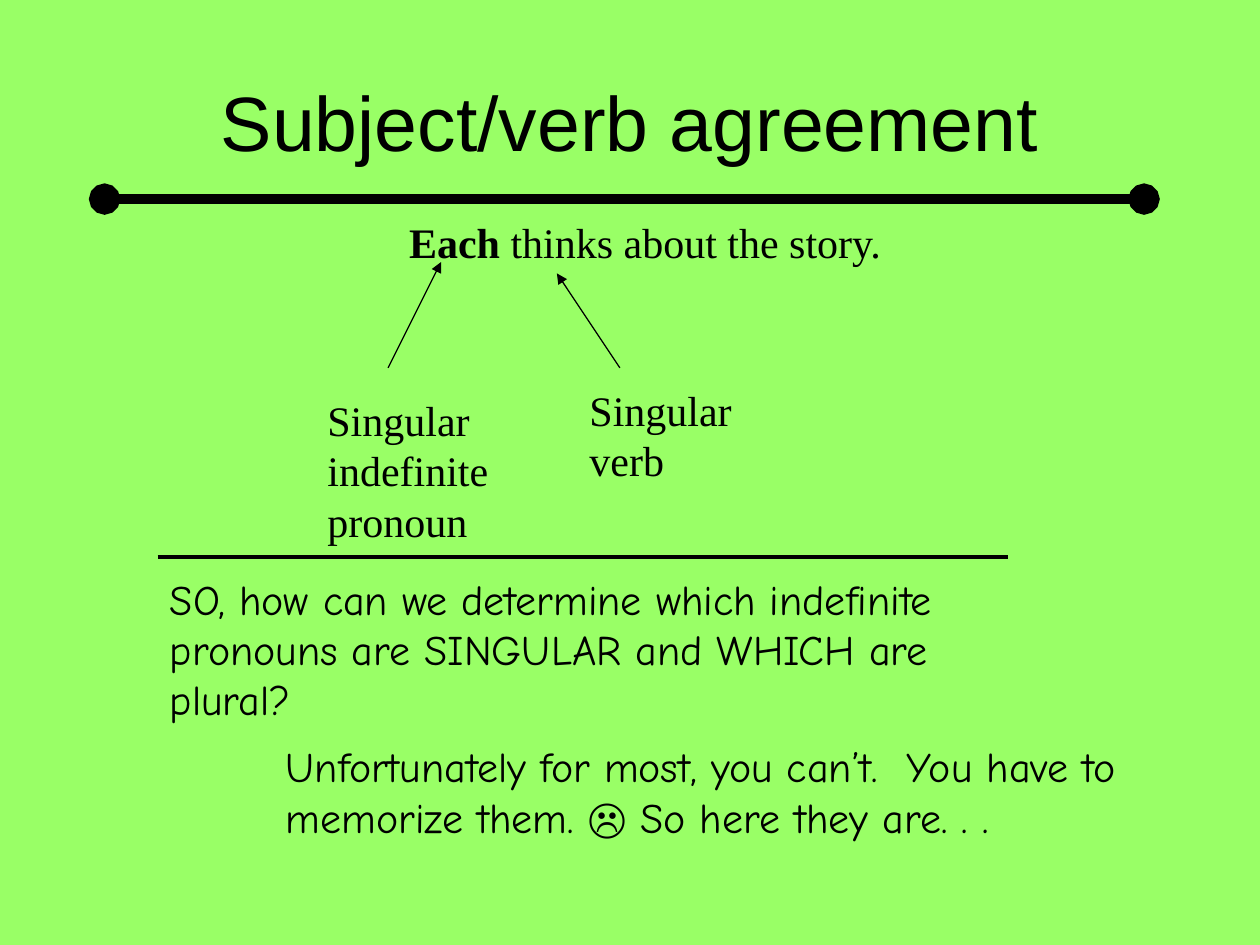
import dataclasses

import pptx
import pptx.dml.color
import pptx.enum.shapes
import pptx.enum.text
import pptx.oxml
import pptx.oxml.ns
import pptx.util
from pptx.util import Inches

ALIGN = pptx.enum.text.PP_ALIGN


@dataclasses.dataclass(frozen=True)
class Theme:
    background: str = "99FF66"
    ink: str = "000000"
    title_font: str = "Arial"
    example_font: str = "Times New Roman"
    note_font: str = "Comic Neue"
    title_size: float = 44
    body_size: float = 24
    line_spacing: float = 28.8


class SlideBuilder:
    def __init__(self, prs, theme):
        self.theme = theme
        self.s = prs.slides.add_slide(prs.slide_layouts[5])
        fill = self.s.background.fill
        fill.solid()
        fill.fore_color.rgb = self.color(theme.background)

    def color(self, value):
        return pptx.dml.color.RGBColor.from_string(value)

    def format(self, p, font, size, align):
        p.alignment = align
        p.font.name = font
        p.font.size = pptx.util.Pt(size)
        p.font.color.rgb = self.color(self.theme.ink)

    def title(self, text, left, top, width, height):
        sp = self.s.shapes.title
        sp.left, sp.top = Inches(left), Inches(top)
        sp.width, sp.height = Inches(width), Inches(height)
        tf = sp.text_frame
        tf.text = text
        tf.vertical_anchor = pptx.enum.text.MSO_ANCHOR.MIDDLE
        self.format(tf.paragraphs[0], self.theme.title_font,
                    self.theme.title_size, ALIGN.CENTER)

    def text(self, runs, left, top, width, height, font, align=ALIGN.LEFT):
        sp = self.s.shapes.add_textbox(
            Inches(left), Inches(top), Inches(width), Inches(height))
        tf = sp.text_frame
        tf.word_wrap = True
        tf.auto_size = pptx.enum.text.MSO_AUTO_SIZE.SHAPE_TO_FIT_TEXT
        p = tf.paragraphs[0]
        p.line_spacing = pptx.util.Pt(self.theme.line_spacing)
        self.format(p, font, self.theme.body_size, align)
        for text, bold in runs:
            r = p.add_run()
            r.text = text
            r.font.bold = bold

    def line(self, x1, y1, x2, y2, weight, head=None, tail=None):
        sp = self.s.shapes.add_connector(
            pptx.enum.shapes.MSO_CONNECTOR.STRAIGHT,
            Inches(x1), Inches(y1), Inches(x2), Inches(y2))
        sp.line.width = pptx.util.Pt(weight)
        sp.line.color.rgb = self.color(self.theme.ink)
        ln = sp.line._get_or_add_ln()
        for tag, kind in (("a:headEnd", head), ("a:tailEnd", tail)):
            if kind:
                end = pptx.oxml.xmlchemy.OxmlElement(tag)
                end.set("type", kind)
                ln.append(end)
        sp._element.spPr.append(
            pptx.oxml.xmlchemy.OxmlElement("a:effectLst"))


def main():
    prs = pptx.Presentation()
    prs.slide_width, prs.slide_height = Inches(10), Inches(7.5)
    theme = Theme()
    b = SlideBuilder(prs, theme)

    b.title("Subject/verb agreement", 0.75, 0.33, 8.5, 1.25)
    b.line(0.83, 1.58, 9.08, 1.58, 6, head="oval", tail="oval")

    b.text([("Each", True), (" thinks about the story.", False)],
           1.33, 1.67, 7.58, 0.5, theme.example_font, ALIGN.CENTER)
    b.line(3.08, 2.92, 3.5, 2.08, 0.75, tail="triangle")
    b.text([("Singular indefinite pronoun", False)],
           2.5, 3.08, 1.58, 1.3, theme.example_font)
    b.line(4.92, 2.92, 4.42, 2.17, 0.75, tail="triangle")
    b.text([("Singular verb", False)],
           4.58, 3, 1.58, 0.9, theme.example_font)

    b.line(1.25, 4.42, 8, 4.42, 2.25)
    b.text([("SO, how can we determine which indefinite pronouns are "
             "SINGULAR and WHICH are plural?", False)],
           1.25, 4.5, 6.92, 1.3, theme.note_font)
    b.text([("Unfortunately for most, you can’t.  You have to memorize "
             "them. ☹ So here they are. . .", False)],
           2.17, 5.83, 6.92, 0.9, theme.note_font)

    prs.save("out.pptx")


if __name__ == "__main__":
    main()
